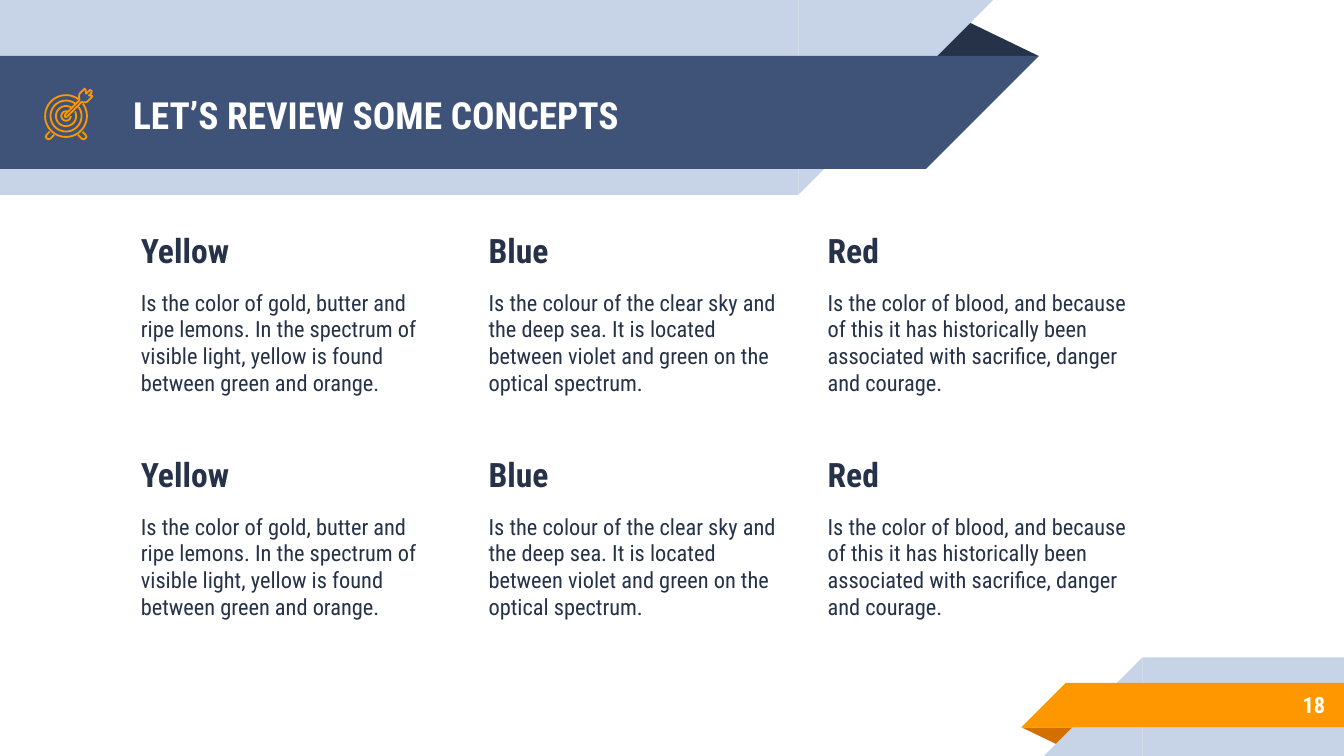
from math import cos, radians, sin

from pptx import Presentation
from pptx.dml.color import RGBColor
from pptx.enum.shapes import MSO_SHAPE
from pptx.enum.text import MSO_ANCHOR, MSO_AUTO_SIZE, PP_ALIGN
from pptx.oxml.ns import qn
from pptx.util import Pt

RECTANGLE = MSO_SHAPE.RECTANGLE
TRIANGLE = MSO_SHAPE.ISOSCELES_TRIANGLE
RIGHT_TRIANGLE = MSO_SHAPE.RIGHT_TRIANGLE
TOP, MIDDLE = MSO_ANCHOR.TOP, MSO_ANCHOR.MIDDLE
LEFT, RIGHT = PP_ALIGN.LEFT, PP_ALIGN.RIGHT
NO_AUTOFIT = MSO_AUTO_SIZE.NONE

WHITE = RGBColor(0xFF, 0xFF, 0xFF)
NAVY = RGBColor(0x26, 0x32, 0x48)
BLUE = RGBColor(0x3F, 0x53, 0x78)
PALE_BLUE = RGBColor(0xC7, 0xD3, 0xE6)
ORANGE = RGBColor(0xFF, 0x98, 0x00)
DARK_ORANGE = RGBColor(0xD2, 0x6F, 0x00)

SLIDE_WIDTH, SLIDE_HEIGHT = 720, 405
TITLE_ONLY = 5

CONCEPTS = [
    (68.4, "Yellow", "Is the color of gold, butter and ripe lemons. In the spectrum of "
     "visible light, yellow is found between green and orange."),
    (254.7, "Blue", "Is the colour of the clear sky and the deep sea. It is located "
     "between violet and green on the optical spectrum."),
    (436.3, "Red", "Is the color of blood, and because of this it has historically been "
     "associated with sacrifice, danger and courage."),
]
ROW_TOPS = (115.9, 235.9)

TARGET_CENTER = (35.4, 62.2)
# Radius, then the angles in degrees where the gap for the arrow begins and ends.
TARGET_RINGS = [(11.2, 36, 54), (8.3, 36, 54), (5.4, 27, 58), (2.5, 0, 74)]
TARGET_FOOT = [(26.6, 70.6), (25, 72.2), (24.5, 73.2), (25, 74.2), (26.2, 74.6),
               (27.2, 74.2), (29, 72.2)]
ARROW = [(49.1, 51.2), (47.7, 51.2), (49, 49.9), (49.2, 48.8), (48.3, 48.2),
         (46.2, 50.2), (45.9, 48.2), (45.4, 47.5), (42.6, 50.3), (42.4, 51.8),
         (42.6, 53.7), (34.7, 61.6), (34.7, 62.6), (35.8, 62.7), (43.7, 54.7),
         (45.7, 54.9), (46.7, 54.6), (49.2, 52.1), (49.5, 51.5)]


class SlideBuilder:
    font = "Roboto Condensed"
    inset = Pt(7.2)
    icon_line = Pt(0.96)

    def __init__(self, slide):
        self.slide = slide

    def block(self, kind, left, top, width, height, color):
        shape = self.slide.shapes.add_shape(kind, Pt(left), Pt(top), Pt(width), Pt(height))
        shape.shadow.inherit = False
        shape.fill.solid()
        shape.fill.fore_color.rgb = color
        shape.line.fill.background()
        return shape

    def fold(self, left, top, width, height, color, rotation=0):
        shape = self.block(TRIANGLE, left, top, width, height, color)
        shape.adjustments[0] = 0.324
        shape.rotation = rotation

    def ribbon(self, left, top, width, height, color, flip):
        """Draw a bar with a 45-degree end: on the right for flipV, on the left for flipH."""
        self.block(RECTANGLE, left, top, width, height, color)
        end_left = left + width if flip == "flipV" else left - height
        end = self.block(RIGHT_TRIANGLE, end_left, top, height, height, color)
        end.element.spPr.find(qn("a:xfrm")).set(flip, "1")

    def outline(self, points, close=False):
        start, *others = [(Pt(x), Pt(y)) for x, y in points]
        builder = self.slide.shapes.build_freeform(*start)
        builder.add_line_segments(others, close=close)
        shape = builder.convert_to_shape()
        shape.shadow.inherit = False
        shape.fill.background()
        shape.line.color.rgb = ORANGE
        shape.line.width = self.icon_line

    def ring(self, radius, gap_start, gap_end):
        x, y = TARGET_CENTER
        steps = 48
        sweep = 360 - (gap_end - gap_start)
        angles = [radians(gap_end + sweep * step / steps) for step in range(steps + 1)]
        self.outline([(x + radius * cos(a), y - radius * sin(a)) for a in angles])

    def prepare_frame(self, shape, anchor):
        frame = shape.text_frame
        frame.word_wrap = True
        frame.auto_size = NO_AUTOFIT
        frame.vertical_anchor = anchor
        frame.margin_left = frame.margin_right = self.inset
        frame.margin_top = frame.margin_bottom = self.inset
        return frame

    def format_paragraph(self, paragraph, size, color, bold, alignment=LEFT):
        paragraph.alignment = alignment
        for run in paragraph.runs:
            run.font.name = self.font
            run.font.size = Pt(size)
            run.font.bold = bold
            run.font.color.rgb = color

    def text_box(self, left, top, width, height, text, anchor=TOP):
        shape = self.slide.shapes.add_textbox(Pt(left), Pt(top), Pt(width), Pt(height))
        frame = self.prepare_frame(shape, anchor)
        frame.text = text
        return frame

    def title(self, left, top, width, height, text):
        shape = self.slide.shapes.title
        shape.left, shape.top, shape.width, shape.height = map(Pt, (left, top, width, height))
        frame = self.prepare_frame(shape, MIDDLE)
        frame.text = text
        self.format_paragraph(frame.paragraphs[0], 20, WHITE, True)
        # Bring the title in front of the ribbons.
        shape.element.getparent().append(shape.element)

    def concept(self, left, top, heading, description):
        frame = self.text_box(left, top, 177.1, 119.5, f"{heading}\n{description}")
        heading_paragraph, description_paragraph = frame.paragraphs
        heading_paragraph.space_before = Pt(6)
        description_paragraph.space_before = Pt(10)
        self.format_paragraph(heading_paragraph, 18, NAVY, True)
        self.format_paragraph(description_paragraph, 12, NAVY, False)

    def slide_number(self, left, top, width, height, text):
        frame = self.text_box(left, top, width, height, text, MIDDLE)
        self.format_paragraph(frame.paragraphs[0], 12, WHITE, True, RIGHT)

    def target_icon(self):
        for ring in TARGET_RINGS:
            self.ring(*ring)
        self.outline(TARGET_FOOT)
        self.outline([(2 * TARGET_CENTER[0] - x, y) for x, y in TARGET_FOOT])
        self.outline(ARROW, close=True)


def main():
    presentation = Presentation()
    presentation.slide_width = Pt(SLIDE_WIDTH)
    presentation.slide_height = Pt(SLIDE_HEIGHT)
    slide = presentation.slides.add_slide(presentation.slide_layouts[TITLE_ONLY])
    builder = SlideBuilder(slide)

    builder.fold(495.4, 10.1, 61.2, 20, NAVY)
    builder.ribbon(0, 0, 427.7, 104.4, PALE_BLUE, "flipV")
    builder.ribbon(0, 30, 496.1, 60.5, BLUE, "flipV")

    builder.fold(547.2, 389.6, 31, 10.1, DARK_ORANGE, rotation=180)
    builder.ribbon(612, 352.2, 108, 52.8, PALE_BLUE, "flipH")
    builder.ribbon(571, 365.8, 149, 23.8, ORANGE, "flipH")

    builder.title(64.1, 31, 414, 60.5, "LET’S REVIEW SOME CONCEPTS")
    for top in ROW_TOPS:
        for left, heading, description in CONCEPTS:
            builder.concept(left, top, heading, description)
    builder.slide_number(599.8, 365.2, 117.2, 25, "18")
    builder.target_icon()

    presentation.save("out.pptx")


if __name__ == "__main__":
    main()
